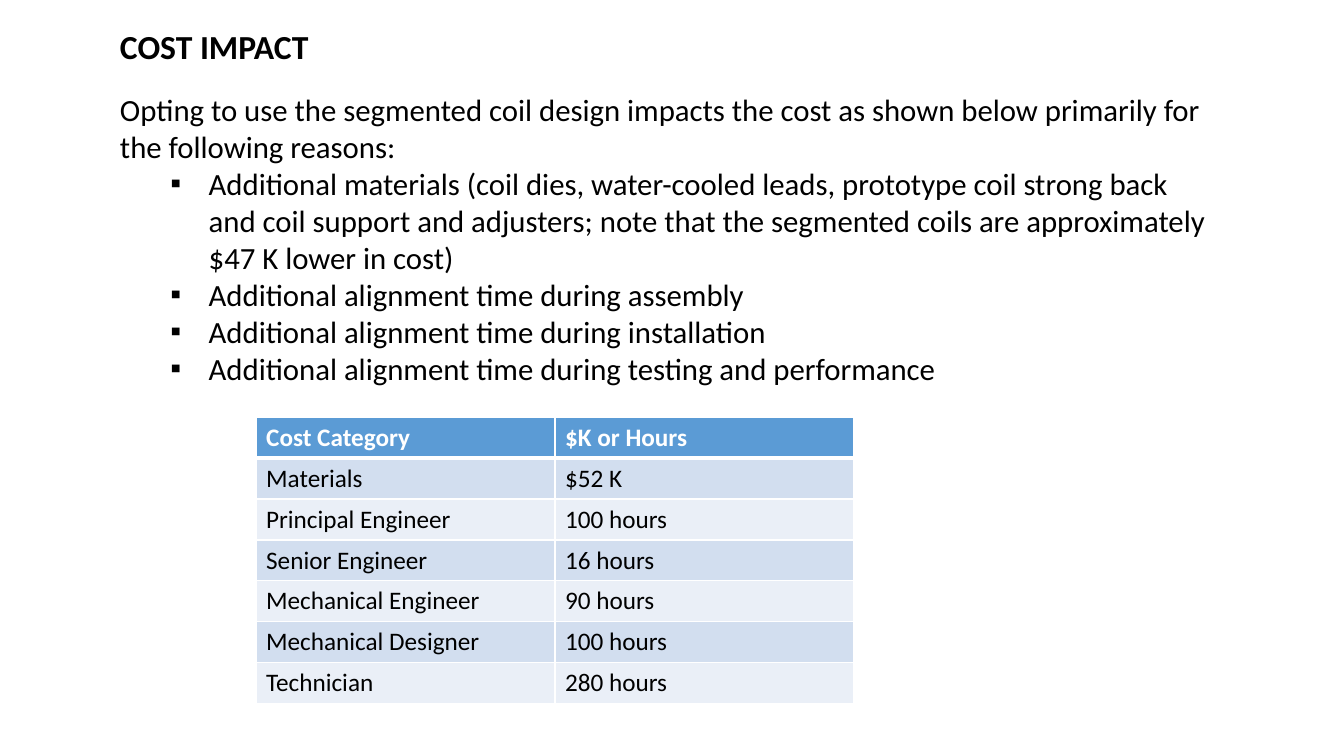
import pptx
import pptx.dml.color
import pptx.enum.text
import pptx.oxml
import pptx.oxml.ns
import pptx.util
from pptx.dml.color import RGBColor
from pptx.util import Inches

BLACK = RGBColor(0x00, 0x00, 0x00)
WHITE = RGBColor(0xFF, 0xFF, 0xFF)
HEADER_BLUE = RGBColor(0x5B, 0x9B, 0xD5)
DARK_BAND = RGBColor(0xD2, 0xDE, 0xEF)
LIGHT_BAND = RGBColor(0xEA, 0xEF, 0xF7)

INTRO = ("Opting to use the segmented coil design impacts the cost as shown "
         "below primarily for the following reasons:")
REASONS = [
    "Additional materials (coil dies, water-cooled leads, prototype coil strong "
    "back and coil support and adjusters; note that the segmented coils are "
    "approximately $47 K lower in cost)",
    "Additional alignment time during assembly",
    "Additional alignment time during installation",
    "Additional alignment time during testing and performance",
]
COSTS = [
    ("Cost Category", "$K or Hours"),
    ("Materials", "$52 K"),
    ("Principal Engineer", "100 hours"),
    ("Senior Engineer", "16 hours"),
    ("Mechanical Engineer", "90 hours"),
    ("Mechanical Designer", "100 hours"),
    ("Technician", "280 hours"),
]


class SlideBuilder:
    """Holds the slide and its text style."""

    font_name = "Calibri"

    def __init__(self, slide):
        self.slide = slide

    def style(self, paragraph, size, color=BLACK, bold=False):
        paragraph.alignment = pptx.enum.text.PP_ALIGN.LEFT
        paragraph.space_before = pptx.util.Pt(0)
        paragraph.line_spacing = 1.0
        for run in paragraph.runs:
            run.font.name = self.font_name
            run.font.size = pptx.util.Pt(size)
            run.font.bold = bold
            run.font.color.rgb = color

    def place(self, shape, left, top, width, height, wrap):
        shape.left, shape.top = Inches(left), Inches(top)
        shape.width, shape.height = Inches(width), Inches(height)
        text_frame = shape.text_frame
        text_frame.word_wrap = wrap
        text_frame.auto_size = pptx.enum.text.MSO_AUTO_SIZE.SHAPE_TO_FIT_TEXT
        text_frame.vertical_anchor = pptx.enum.text.MSO_ANCHOR.TOP

    def title(self, text, *box):
        shape = self.slide.shapes.title
        self.place(shape, *box, wrap=False)
        shape.text_frame.text = text
        self.style(shape.text_frame.paragraphs[0], 24, bold=True)

    def body(self, intro, reasons, *box):
        shape = self.slide.placeholders[1]
        self.place(shape, *box, wrap=True)
        shape.text_frame.text = "\n".join([intro, *reasons])
        for index, paragraph in enumerate(shape.text_frame.paragraphs):
            self.style(paragraph, 22)
            if index == 0:
                self.bullet(paragraph, 0, 0, None)
            else:
                paragraph.level = 1
                self.bullet(paragraph, 0.88, -0.38, "▪")

    def bullet(self, paragraph, margin, indent, character):
        properties = paragraph._p.get_or_add_pPr()
        properties.set("marL", str(Inches(margin)))
        properties.set("indent", str(Inches(indent)))
        tag = "a:buChar" if character else "a:buNone"
        mark = pptx.oxml.xmlchemy.OxmlElement(tag)
        if character:
            mark.set("char", character)
        properties.append(mark)

    def border(self, cell, side, points):
        properties = cell._tc.get_or_add_tcPr()
        properties.append(pptx.oxml.parse_xml(
            f'<a:{side} {pptx.oxml.ns.nsdecls("a")} w="{pptx.util.Pt(points)}">'
            f'<a:solidFill><a:srgbClr val="{WHITE}"/></a:solidFill></a:{side}>'))

    def table(self, rows, left, top, width, height):
        frame = self.slide.shapes.add_table(
            len(rows), len(rows[0]), Inches(left), Inches(top),
            Inches(width), Inches(height))
        for row_index, row in enumerate(rows):
            header = row_index == 0
            band = DARK_BAND if row_index % 2 else LIGHT_BAND
            for column_index, text in enumerate(row):
                cell = frame.table.cell(row_index, column_index)
                cell.text_frame.text = text
                self.style(cell.text_frame.paragraphs[0], 18,
                           WHITE if header else BLACK, header)
                # A heavier rule separates the header from the first row
                self.border(cell, "lnL", 1)
                self.border(cell, "lnR", 1)
                self.border(cell, "lnT", 3 if row_index == 1 else 1)
                self.border(cell, "lnB", 3 if header else 1)
                cell.fill.solid()
                cell.fill.fore_color.rgb = HEADER_BLUE if header else band


def main():
    presentation = pptx.Presentation()
    presentation.slide_width = Inches(13.33)
    presentation.slide_height = Inches(7.5)
    slide = presentation.slides.add_slide(presentation.slide_layouts[1])
    builder = SlideBuilder(slide)

    # Heading and reasons
    builder.title("COST IMPACT", 1.09, 0.21, 2.17, 0.5)
    builder.body(INTRO, REASONS, 1.09, 0.85, 10.99, 3.06)

    # Cost table
    builder.table(COSTS, 2.54, 4.14, 5.93, 2.84)

    presentation.save("out.pptx")


if __name__ == "__main__":
    main()
